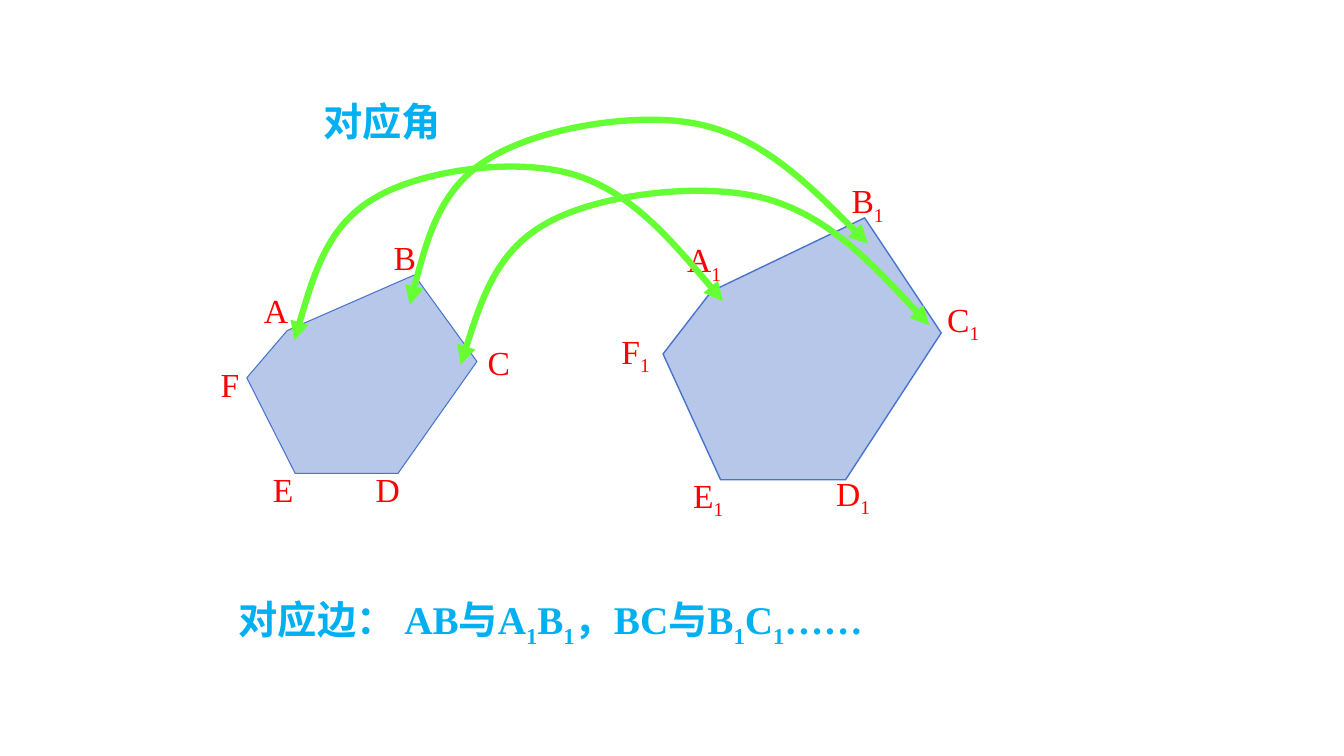
import itertools

import pptx
import pptx.dml.color
import pptx.enum.text
import pptx.oxml.ns
import pptx.oxml.xmlchemy
import pptx.util

Cm = pptx.util.Cm
Pt = pptx.util.Pt
qn = pptx.oxml.ns.qn
OxmlElement = pptx.oxml.xmlchemy.OxmlElement

COLORS = {
    "hexagon": "B6C7EA",
    "edge": "4874CB",
    "vertex": "FF0000",
    "heading": "00B0F0",
    "arc": "66FF33",
}
FONT = "Times New Roman"

# Offsets in cm from the top left of each hexagon: vertex, then label box
SMALL_HEXAGON = {
    "A": ((1.02, 1.4), (0.18, 0.25)),
    "F": ((0, 2.59), (-0.91, 2.11)),
    "E": ((1.22, 5), (0.41, 4.75)),
    "D": ((3.81, 5), (3, 4.75)),
    "C": ((5.8, 2.18), (5.82, 1.57)),
    "B": ((4.22, 0), (3.45, -1.09)),
}
LARGE_HEXAGON = {
    "A1": ((1.22, 1.85), (0.36, 0.41)),
    "F1": ((0, 3.43), (-1.3, 2.72)),
    "E1": ((1.45, 6.6), (0.51, 6.35)),
    "D1": ((4.6, 6.6), (4.11, 6.3)),
    "C1": ((7.01, 2.9), (6.91, 1.91)),
    "B1": ((5.08, 0), (4.5, -1.07)),
}

# Bezier points in cm of an arc that is ARC_WIDTH wide
ARC_WIDTH = 10.8
ARC_POINTS = [
    (0, 4.62), (0.41, 3.18), (0.84, 1.73), (2.01, 1.04), (3.18, 0.33),
    (5.54, 0), (7.01, 0.43), (8.46, 0.86), (9.63, 2.24), (10.8, 3.63),
]
# Left, top, width in cm, and rotation in degrees
ARCS = [
    (7.42, 3.96, 10.8, 0),
    (10.21, 2.79, 11.61, -2.7),
    (11.61, 4.57, 11.81, 0),
]


def rgb(name):
    return pptx.dml.color.RGBColor.from_string(COLORS[name])


def add_text(shapes, text, left, top, width, height, size, color, bold=False):
    """Text box in which every digit is a subscript."""
    box = shapes.add_textbox(Cm(left), Cm(top), Cm(width), Cm(height))
    box.text_frame.word_wrap = True
    box.text_frame.auto_size = pptx.enum.text.MSO_AUTO_SIZE.SHAPE_TO_FIT_TEXT
    para = box.text_frame.paragraphs[0]
    para.font.name = FONT
    para.font.size = Pt(size)
    para.font.bold = bold
    para.font.color.rgb = rgb(color)
    for is_index, letters in itertools.groupby(text, str.isdigit):
        span = para.add_run()
        span.text = "".join(letters)
        if is_index:
            span._r.get_or_add_rPr().set("baseline", "-25000")


def add_outline(shapes, points, left, top, close):
    corners = [(Cm(left + x), Cm(top + y)) for x, y in points]
    builder = shapes.build_freeform(*corners[0], scale=1.0)
    builder.add_line_segments(corners[1:], close=close)
    outline = builder.convert_to_shape()
    outline.shadow.inherit = False
    return outline


def add_hexagon(shapes, vertices, left, top, line_width):
    points = [vertex for vertex, label in vertices.values()]
    hexagon = add_outline(shapes, points, left, top, close=True)
    hexagon.fill.solid()
    hexagon.fill.fore_color.rgb = rgb("hexagon")
    hexagon.line.color.rgb = rgb("edge")
    hexagon.line.width = Pt(line_width)
    for name, (vertex, (x, y)) in vertices.items():
        add_text(shapes, name, left + x, top + y, 2.21, 1.3, 24, "vertex")


def add_arc(shapes, left, top, width, rotation):
    points = [(x * width / ARC_WIDTH, y) for x, y in ARC_POINTS]
    arc = add_outline(shapes, points, left, top, close=False)
    arc.rotation = rotation
    arc.fill.background()
    arc.line.color.rgb = rgb("arc")
    arc.line.width = Pt(4.5)

    # Every three straight segments become one Bezier segment
    track = next(arc._element.iter(qn("a:path")))
    segments = track.findall(qn("a:lnTo"))
    for first in range(0, len(segments), 3):
        bezier = OxmlElement("a:cubicBezTo")
        for segment in segments[first:first + 3]:
            bezier.append(segment[0])
            track.remove(segment)
        track.append(bezier)

    # Arrowheads at both ends
    stroke = arc._element.spPr.get_or_add_ln()
    for tag in ("a:headEnd", "a:tailEnd"):
        tip = OxmlElement(tag)
        tip.set("type", "triangle")
        stroke.append(tip)


def main():
    deck = pptx.Presentation()
    deck.slide_width, deck.slide_height = Cm(33.87), Cm(19.05)
    page = deck.slides.add_slide(deck.slide_layouts[6])

    # The two hexagons
    figures = page.shapes.add_group_shape().shapes
    add_hexagon(figures, SMALL_HEXAGON, 6.22, 6.93, 0.75)
    add_hexagon(figures, LARGE_HEXAGON, 16.71, 5.49, 1)

    # Corresponding angles and sides
    add_text(page.shapes, "对应角", 7.9, 2.34, 5.21, 1.45, 28, "heading", True)
    add_text(page.shapes, "对应边： AB与A1B1，BC与B1C1……",
             5.77, 14.88, 21.87, 1.45, 28, "heading", True)

    # Arcs that pair the angles
    for arc in ARCS:
        add_arc(page.shapes, *arc)

    deck.save("out.pptx")


if __name__ == "__main__":
    main()
